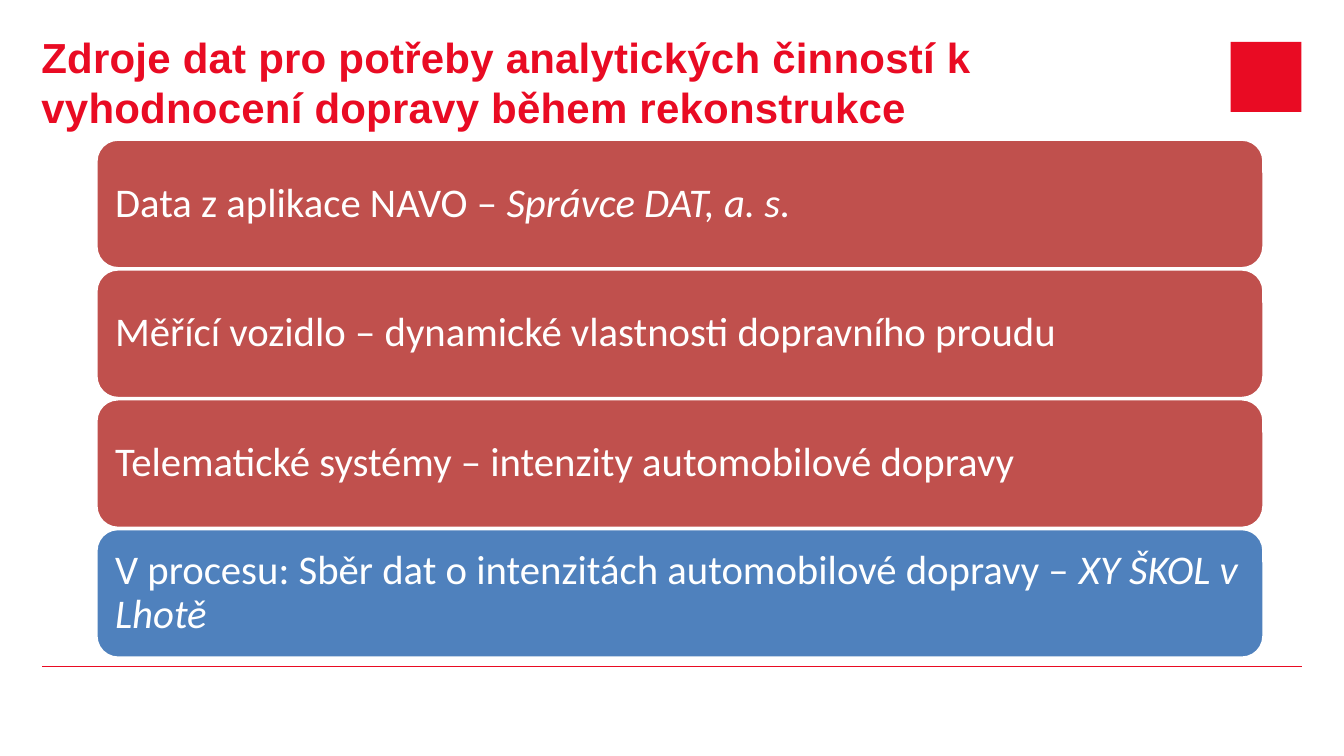
from dataclasses import dataclass

from lxml import etree
from pptx import Presentation, util as u
from pptx.dml.color import RGBColor
from pptx.enum import shapes, text
from pptx.oxml.ns import qn


@dataclass(frozen=True)
class Theme:
    """Colours, fonts and type sizes of the slide."""
    red: str = "E90B23"
    card: str = "C0504D"
    pending: str = "4F81BD"
    white: str = "FFFFFF"
    title_font: str = "Arial"
    card_font: str = "Calibri"
    title_size: float = 49.5
    card_size: float = 48


T = Theme()
TITLE = "Zdroje dat pro potřeby analytických činností k vyhodnocení dopravy během rekonstrukce"
SOURCES = [
    ("Data z aplikace NAVO – ", "Správce DAT, a. s.", T.card),
    ("Měřící vozidlo – dynamické vlastnosti dopravního proudu", "", T.card),
    ("Telematické systémy – intenzity automobilové dopravy", "", T.card),
    ("V procesu: Sběr dat o intenzitách automobilové dopravy – ", "XY ŠKOL v Lhotě", T.pending),
]


def px(n):
    """Turn whole px into EMU, 96 to the inch."""
    return u.Emu(n * 9525)


def assign(obj, **values):
    """Set attributes from a dict of format values."""
    for name, value in values.items():
        setattr(obj, name, value)


def place(sp, box):
    """Move a shape to a box given in px."""
    assign(sp, **dict(zip(("left", "top", "width", "height"), map(px, box))))


def set_frame(tf, anchor, inset):
    """Set wrapping, anchor and equal insets of a text frame."""
    sides = ("margin_left", "margin_top", "margin_right", "margin_bottom")
    assign(tf, word_wrap=True, auto_size=text.MSO_AUTO_SIZE.NONE,
           vertical_anchor=anchor, **dict.fromkeys(sides, px(inset)))


def set_line(sp, color, width):
    """Set the colour and width in points of an outline."""
    sp.line.color.rgb = RGBColor.from_string(color)
    sp.line.width = u.Pt(width)


def add_run(p, words, color, **font):
    """Append a formatted run to a paragraph."""
    r = p.add_run()
    r.text = words
    assign(r.font, **font)
    r.font.color.rgb = RGBColor.from_string(color)
    return r


def add_block(s, kind, box, fill):
    """Add a filled shape without shadow or outline."""
    sp = s.shapes.add_shape(kind, *map(px, box))
    sp.shadow.inherit = False
    sp.fill.solid()
    sp.fill.fore_color.rgb = RGBColor.from_string(fill)
    sp.line.fill.background()
    return sp


def add_title(s, box):
    """Fill the title placeholder."""
    sp = s.shapes.title
    place(sp, box)
    set_frame(sp.text_frame, text.MSO_ANCHOR.TOP, 0)
    p = sp.text_frame.paragraphs[0]
    assign(p, alignment=text.PP_ALIGN.LEFT, space_before=u.Pt(0.9))
    r = add_run(p, TITLE, T.red, name=T.title_font, size=u.Pt(T.title_size), bold=True)
    r.font._element.set("spc", "30")


def add_cards(s, box, gap):
    """Stack one rounded card per data source in the box."""
    left, top, width, height = box
    pitch = (height + gap) // len(SOURCES)
    for i, (plain, owner, fill) in enumerate(SOURCES):
        card = (left, top + i * pitch, width, pitch - gap)
        sp = add_block(s, shapes.MSO_SHAPE.ROUNDED_RECTANGLE, card, fill)
        set_line(sp, T.white, 2)
        set_frame(sp.text_frame, text.MSO_ANCHOR.MIDDLE, 19)
        p = sp.text_frame.paragraphs[0]
        assign(p, alignment=text.PP_ALIGN.LEFT, line_spacing=0.9)
        font = dict(name=T.card_font, size=u.Pt(T.card_size))
        add_run(p, plain, T.white, **font)
        if owner:
            add_run(p, owner, T.white, italic=True, **font)


def add_rule(s, left, top, width):
    """Draw the red footer rule."""
    ends = map(px, (left, top, left + width, top))
    sp = s.shapes.add_connector(shapes.MSO_CONNECTOR.STRAIGHT, *ends)
    set_line(sp, T.red, 1.65)
    etree.SubElement(sp._element.spPr, qn("a:effectLst"))


def main():
    """Build the slide and save it."""
    prs = Presentation()
    assign(prs, slide_width=px(2111), slide_height=px(1188))
    s = prs.slides.add_slide(prs.slide_layouts[5])
    add_rule(s, 66, 1047, 1979)
    add_block(s, shapes.MSO_SHAPE.RECTANGLE, (1933, 66, 111, 110), T.red)
    add_title(s, (65, 49, 1879, 82))
    add_cards(s, (152, 220, 1832, 813), 3)
    prs.save("out.pptx")


if __name__ == "__main__":
    main()
